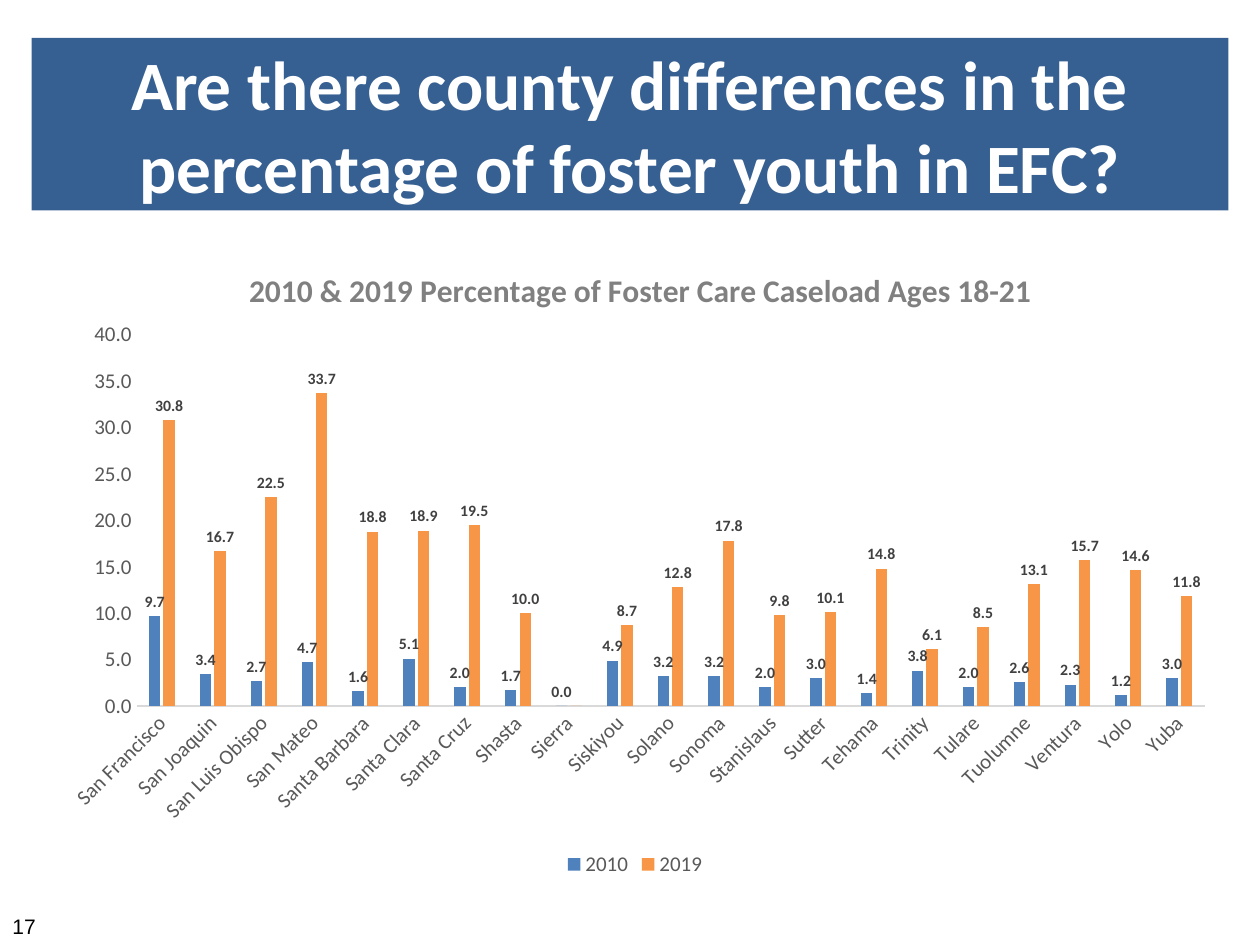
from lxml.etree import SubElement
from pptx import Presentation
from pptx.chart.data import CategoryChartData
from pptx.dml.color import RGBColor
from pptx.enum.chart import (XL_CHART_TYPE, XL_LABEL_POSITION,
                             XL_LEGEND_POSITION, XL_TICK_MARK)
from pptx.enum.text import MSO_ANCHOR, MSO_AUTO_SIZE, PP_ALIGN
from pptx.oxml import parse_xml
from pptx.oxml.ns import nsdecls, qn
from pptx.util import Inches, Pt

RATES = [
    ("San Francisco", 9.7, 30.8), ("San Joaquin", 3.4, 16.7),
    ("San Luis Obispo", 2.7, 22.5), ("San Mateo", 4.7, 33.7),
    ("Santa Barbara", 1.6, 18.8), ("Santa Clara", 5.1, 18.9),
    ("Santa Cruz", 2.0, 19.5), ("Shasta", 1.7, 10.0),
    ("Sierra", 0.0, 0.0), ("Siskiyou", 4.9, 8.7),
    ("Solano", 3.2, 12.8), ("Sonoma", 3.2, 17.8),
    ("Stanislaus", 2.0, 9.8), ("Sutter", 3.0, 10.1),
    ("Tehama", 1.4, 14.8), ("Trinity", 3.8, 6.1),
    ("Tulare", 2.0, 8.5), ("Tuolumne", 2.6, 13.1),
    ("Ventura", 2.3, 15.7), ("Yolo", 1.2, 14.6), ("Yuba", 3.0, 11.8),
]


def color(code):
    return RGBColor.from_string(code)


def style(font, size, code, bold=False, face="Calibri"):
    font.name, font.size, font.bold = face, Pt(size), bold
    font.color.rgb = color(code)


def arrange(part, index, **spots):
    """Place a chart part by fractions of the chart's size."""
    layout = part.find(qn("c:layout"))
    if layout is not None:
        part.remove(layout)
    layout = parse_xml(f"<c:layout {nsdecls('c')}/>")
    part.insert(index, layout)
    manual = SubElement(layout, qn("c:manualLayout"))
    if "w" in spots:
        SubElement(manual, qn("c:layoutTarget")).set("val", "inner")
    for key in "xy":
        SubElement(manual, qn(f"c:{key}Mode")).set("val", "edge")
    for key, value in spots.items():
        SubElement(manual, qn(f"c:{key}")).set("val", str(value))


def hide_label(labels, index):
    labels._element.insert(0, parse_xml(
        f'<c:dLbl {nsdecls("c")}><c:idx val="{index}"/>'
        '<c:delete val="1"/></c:dLbl>'))


class Deck:
    ink = "595959"
    band = "376092"

    def __init__(self):
        self.show = Presentation()
        self.show.slide_width, self.show.slide_height = Inches(10), Inches(7.5)
        self.slide = self.show.slides.add_slide(self.show.slide_layouts[5])

    def title(self, text, *box):
        shape = self.slide.shapes.title
        shape.left, shape.top, shape.width, shape.height = map(Inches, box)
        shape.fill.solid()
        shape.fill.fore_color.rgb = color(self.band)
        frame = shape.text_frame
        frame.text = text
        frame.auto_size = MSO_AUTO_SIZE.NONE
        frame.vertical_anchor = MSO_ANCHOR.MIDDLE
        para = frame.paragraphs[0]
        para.alignment = PP_ALIGN.CENTER
        style(para.font, 39.6, "FFFFFF", True)

    def number(self, text, *box):
        frame = self.slide.shapes.add_textbox(*map(Inches, box)).text_frame
        frame.text = text
        frame.word_wrap = False
        style(frame.paragraphs[0].font, 12, "000000", face="Arial")

    def axis(self, axis):
        axis.major_tick_mark = axis.minor_tick_mark = XL_TICK_MARK.NONE
        axis.has_major_gridlines = False
        style(axis.tick_labels.font, 12, self.ink)

    def chart(self, title, rows, fills, *box):
        data = CategoryChartData(number_format="0.0")
        names, *columns = zip(*rows)
        data.categories = names
        for name, values in zip(fills, columns):
            data.add_series(name, values)
        chart = self.slide.shapes.add_chart(
            XL_CHART_TYPE.COLUMN_CLUSTERED, *map(Inches, box), data).chart
        style(chart.font, 10, "000000")

        frame = chart.chart_title.text_frame
        frame.text = title
        style(frame.paragraphs[0].font, 18, "808080", True)
        arrange(chart.chart_title._element, 1, x=0.17, y=0.05)

        chart.has_legend = True
        chart.legend.position = XL_LEGEND_POSITION.BOTTOM
        chart.legend.include_in_layout = False
        style(chart.legend.font, 12, self.ink)

        groups, scale = chart.category_axis, chart.value_axis
        self.axis(groups)
        self.axis(scale)
        groups.format.line.color.rgb = color("D9D9D9")
        groups.format.line.width = Pt(0.75)
        groups._element.find(qn("c:txPr")).find(qn("a:bodyPr")).set(
            "rot", "-2700000")
        scale.format.line.fill.background()
        scale.minimum_scale, scale.maximum_scale = 0, 40
        scale.major_unit = 5
        scale.tick_labels.number_format = "0.0"
        scale.tick_labels.number_format_is_linked = False

        plot = chart.plots[0]
        plot.gap_width, plot.overlap = 219, -27
        plot.vary_by_categories = False
        for series, fill in zip(plot.series, fills.values()):
            series.format.fill.solid()
            series.format.fill.fore_color.rgb = color(fill)
            labels = series.data_labels
            labels.show_value = True
            labels.position = XL_LABEL_POSITION.OUTSIDE_END
            labels.number_format = "0.0"
            labels.number_format_is_linked = False
            style(labels.font, 9, "404040", True)
        hide_label(labels, names.index("Sierra"))
        area = chart._chartSpace.chart.plotArea
        arrange(area, 0, x=0.08, y=0.16, w=0.9, h=0.57)


def main():
    deck = Deck()
    deck.title("Are there county differences in the percentage of foster "
               "youth in EFC?", 0.25, 0.3, 9.5, 1.37)
    deck.number("17", 0, 7.2, 0.39, 0.3)
    deck.chart("2010 & 2019 Percentage of Foster Care Caseload Ages 18-21",
               RATES, {"2010": "4F81BD", "2019": "F79646"},
               0.33, 1.83, 9.42, 5.17)
    deck.show.save("out.pptx")


if __name__ == "__main__":
    main()
